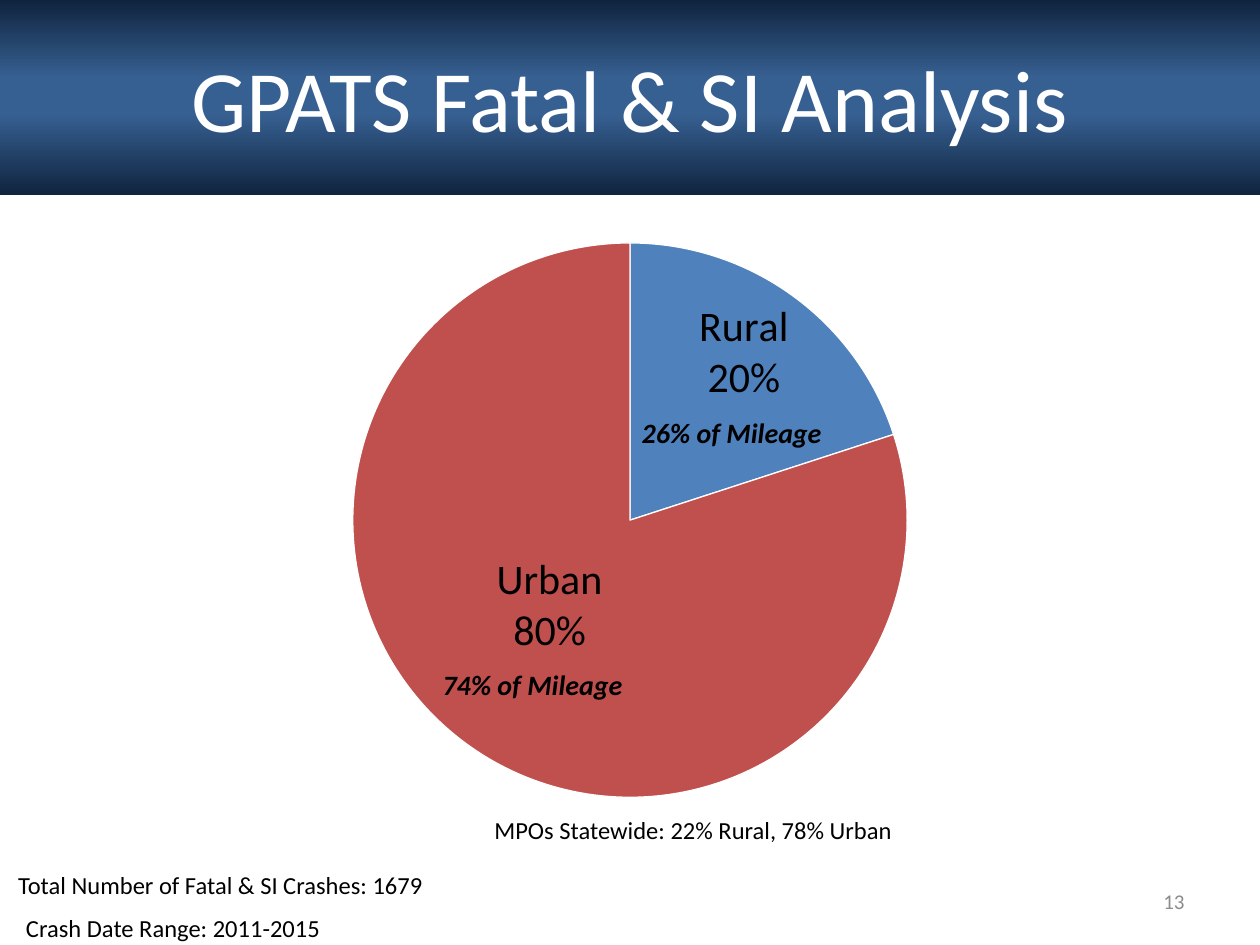
from lxml import etree
from pptx import Presentation
from pptx import util as u
from pptx.chart.data import CategoryChartData
from pptx.dml.color import RGBColor
from pptx.enum import chart as charts, shapes, text
from pptx.oxml import ns

FONT = "Calibri"
COLOURS = {
    "navy": "0F243E", "blue": "376092", "white": "FFFFFF", "black": "000000",
    "grey": "8C8C8C", "rural": "4F81BD", "urban": "C0504D",
}
ALIGN = text.PP_ALIGN


def colour(name):
    return RGBColor.from_string(COLOURS[name])


def style_font(font, size, name="black"):
    font.name = FONT
    font.size = u.Pt(size)
    font.color.rgb = colour(name)


def write(box, words, size, name="black", align=ALIGN.CENTER, strong=False,
          anchor=text.MSO_ANCHOR.TOP):
    frame = box.text_frame
    frame.word_wrap = True
    frame.vertical_anchor = anchor
    para = frame.paragraphs[0]
    para.alignment = align
    span = para.add_run()
    span.text = words
    style_font(span.font, size, name)
    if strong:
        span.font.bold = span.font.italic = True


def add_note(page, place, words, size, **style):
    box = page.shapes.add_textbox(*map(u.Cm, place))
    write(box, words, size, **style)


def add_banner(page, width, height, words):
    """Title band with a gradient that is lightest across its middle."""
    band = page.shapes.add_shape(shapes.MSO_SHAPE.RECTANGLE, 0, 0, width, height)
    band.shadow.inherit = False
    band.line.fill.background()
    band.fill.gradient()
    band.fill.gradient_angle = 270
    stops = band._element.spPr.find(".//" + ns.qn("a:gsLst"))
    for stop in list(stops):
        stops.remove(stop)
    for percent, name in ((0, "navy"), (40, "blue"), (58, "blue"), (100, "navy")):
        stop = etree.SubElement(stops, ns.qn("a:gs"), pos=str(percent * 1000))
        etree.SubElement(stop, ns.qn("a:srgbClr"), val=COLOURS[name])
    write(band, words, 50, "white", anchor=text.MSO_ANCHOR.MIDDLE)


def manual_layout(**settings):
    layout = etree.Element(ns.qn("c:layout"))
    manual = etree.SubElement(layout, ns.qn("c:manualLayout"))
    for key, value in settings.items():
        etree.SubElement(manual, ns.qn("c:" + key), val=str(value))
    return layout


def split_lines(labels):
    """Put the category and the percentage on separate lines."""
    separator = etree.Element(ns.qn("c:separator"))
    separator.text = "\n"
    labels.find(ns.qn("c:showBubbleSize")).addnext(separator)


def label_slices(series):
    labels = series.data_labels
    labels.show_value = False
    labels.show_category_name = labels.show_percentage = True
    labels.position = charts.XL_LABEL_POSITION.INSIDE_END
    style_font(labels.font, 24)

    urban = series.points[1].data_label
    urban.position = charts.XL_LABEL_POSITION.INSIDE_END
    style_font(urban.font, 24)
    item = labels._element.find(ns.qn("c:dLbl"))
    for key, value in (("showVal", 0), ("showCatName", 1), ("showPercent", 1)):
        item.find(ns.qn("c:" + key)).set("val", str(value))
    item.find(ns.qn("c:idx")).addnext(manual_layout(x=0.02, y=-0.12))

    split_lines(item)
    split_lines(labels._element)


def add_pie(page, place):
    data = CategoryChartData()
    data.categories = ["Rural", "Urban"]
    data.add_series("Series 1", (20, 80))
    chart = page.shapes.add_chart(
        charts.XL_CHART_TYPE.PIE, *map(u.Cm, place), data).chart
    chart.has_legend = chart.has_title = False
    style_font(chart.font, 18)
    plot = chart.plots[0]
    plot.vary_by_categories = True
    series = plot.series[0]
    for index, name in enumerate(("rural", "urban")):
        look = series.points[index].format
        look.fill.solid()
        look.fill.fore_color.rgb = colour(name)
        look.line.color.rgb = colour("white")
        look.line.width = u.Pt(0.75)
    label_slices(series)

    area = chart._chartSpace.find(".//" + ns.qn("c:plotArea"))
    for old in area.findall(ns.qn("c:layout")):
        area.remove(old)
    area.insert(0, manual_layout(
        layoutTarget="inner", xMode="edge", yMode="edge",
        x=0.28, y=0.07, w=0.44, h=0.82))


def main():
    deck = Presentation()
    deck.slide_width, deck.slide_height = u.Cm(25.4), u.Cm(19.05)
    page = deck.slides.add_slide(deck.slide_layouts[6])
    add_pie(page, (0, 3.94, 25.4, 13.64))
    add_banner(page, deck.slide_width, u.Cm(3.94), "GPATS Fatal & SI Analysis")
    add_note(page, (18.21, 17.65, 5.92, 1.02), "13", 12, name="grey",
             align=ALIGN.RIGHT, anchor=text.MSO_ANCHOR.MIDDLE)
    add_note(page, (8.26, 16.3, 4.5 * 2.54, 0.86),
             "MPOs Statewide: 22% Rural, 78% Urban", 14)
    add_note(page, (8.26, 13.34, 4.95, 0.94), "74% of Mileage", 16, strong=True)
    add_note(page, (12.06, 8.26, 5.38, 0.94), "26% of Mileage", 16, strong=True)
    add_note(page, (0, 18.29, 6.98, 0.86), "Crash Date Range: 2011-2015", 14)
    add_note(page, (0, 17.42, 8.89, 0.86),
             "Total Number of Fatal & SI Crashes: 1679", 14)
    deck.save("out.pptx")


if __name__ == "__main__":
    main()
